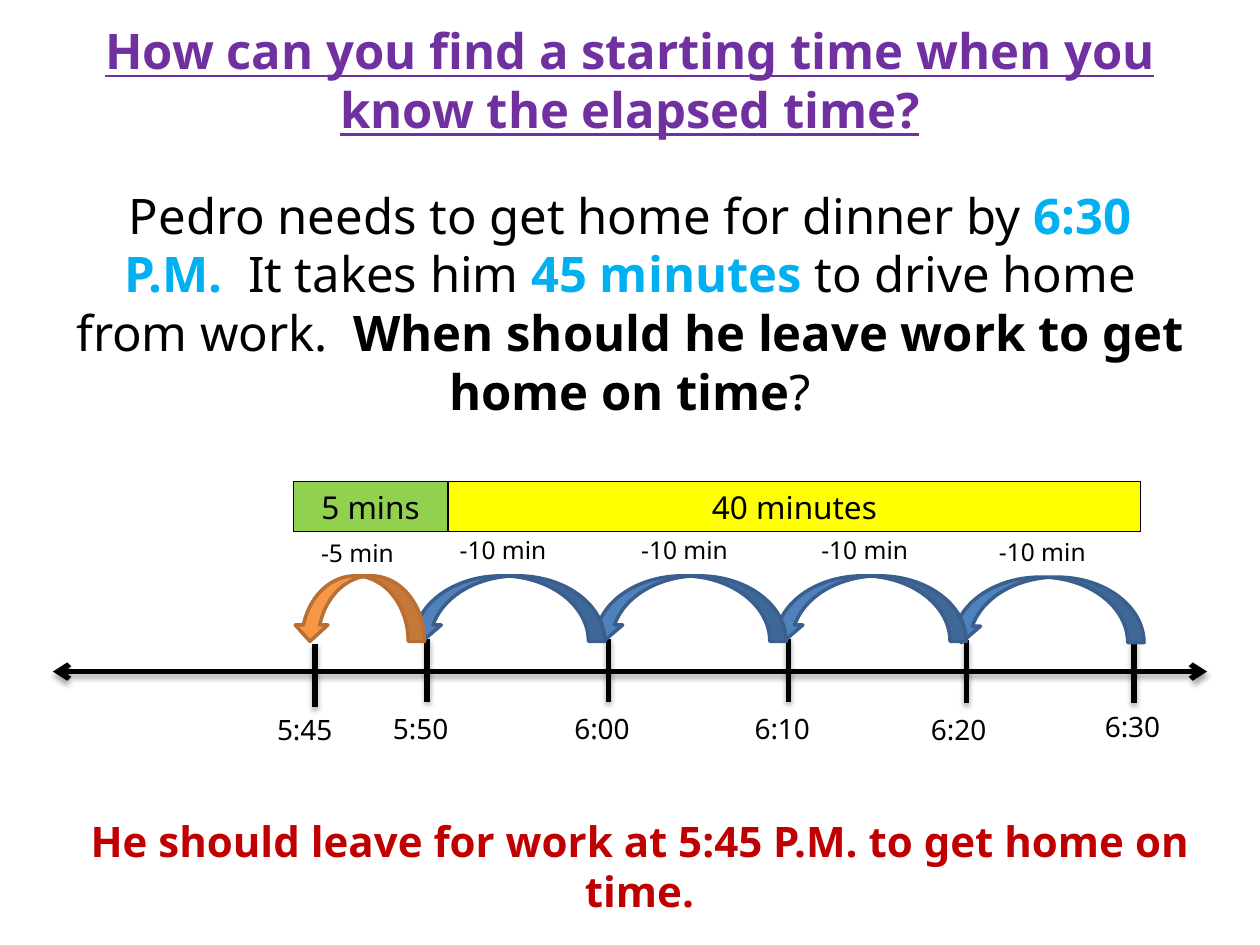
from dataclasses import dataclass

from lxml import etree
from pptx import Presentation
from pptx.dml.color import RGBColor
from pptx.enum import shapes, text
from pptx.oxml import ns
from pptx.util import Inches, Pt


@dataclass(frozen=True)
class Theme:
    font: str = "Noto Sans"
    black: str = "000000"
    purple: str = "7030A0"
    sky: str = "00B0F0"
    red: str = "C00000"
    yellow: str = "FFFF00"
    green: str = "92D050"
    blue_hop: tuple = ("4F81BD", "3A5F8C")
    orange_hop: tuple = ("F79646", "B76F34")
    question: int = 28
    answer: int = 24
    bar: int = 18
    time: int = 16
    hop: int = 14


THEME = Theme()

TIMES = [
    ("6:30", 9, 5.08, 8.67, 5.58),
    ("6:20", 7.67, 5.08, 7.29, 5.61),
    ("6:10", 6.26, 5.07, 5.89, 5.6),
    ("6:00", 4.83, 5.07, 4.46, 5.6),
    ("5:50", 3.39, 5.07, 3.02, 5.6),
    ("5:45", 2.5, 5.11, 2.1, 5.61),
]

STORY = [
    ("Pedro needs to get home for dinner by ", THEME.black, False),
    ("6:30 P.M.  ", THEME.sky, True),
    ("It takes him ", THEME.black, False),
    ("45 minutes ", THEME.sky, True),
    ("to drive home from work.  ", THEME.black, False),
    ("When should he leave work to get home on time", THEME.black, True),
    ("?", THEME.black, False),
]


def inches(*lengths):
    return [Inches(length) for length in lengths]


def style_span(span, size, color, bold=False):
    span.font.name = THEME.font
    span.font.size = Pt(size)
    span.font.bold = bold
    span.font.color.rgb = RGBColor.from_string(color)


def add_text(page, place, spans, size, centered=False, grow=True):
    box = page.shapes.add_textbox(*inches(*place))
    frame = box.text_frame
    frame.word_wrap = True
    if grow:
        frame.auto_size = text.MSO_AUTO_SIZE.SHAPE_TO_FIT_TEXT
    para = frame.paragraphs[0]
    if centered:
        para.alignment = text.PP_ALIGN.CENTER
    for words, color, bold in spans:
        span = para.add_run()
        span.text = words
        style_span(span, size, color, bold)


def add_title(page, words):
    title = page.shapes.title
    title.left, title.top, title.width, title.height = inches(0.5, 0.42, 9, 0.87)
    frame = title.text_frame
    frame.text = words
    frame.auto_size = text.MSO_AUTO_SIZE.NONE
    frame.vertical_anchor = text.MSO_ANCHOR.MIDDLE
    frame.margin_bottom = Inches(0.5)
    para = frame.paragraphs[0]
    para.alignment = text.PP_ALIGN.CENTER
    style_span(para.runs[0], THEME.question, THEME.purple, True)
    para.runs[0].font.underline = True


def add_line(page, start, end, arrows=False):
    line = page.shapes.add_connector(
        shapes.MSO_CONNECTOR.STRAIGHT, *inches(*start, *end))
    line.line.color.rgb = RGBColor.from_string(THEME.black)
    line.line.width = Pt(3)
    properties = line._element.spPr
    if arrows:
        outline = properties.find(ns.qn("a:ln"))
        for tag in ("a:headEnd", "a:tailEnd"):
            etree.SubElement(outline, ns.qn(tag), type="arrow")
    effects = etree.SubElement(properties, ns.qn("a:effectLst"))
    shadow = etree.SubElement(
        effects, ns.qn("a:outerShdw"), blurRad=str(Pt(3.1)),
        dist=str(Pt(1.8)), dir="5400000", rotWithShape="0")
    color = etree.SubElement(shadow, ns.qn("a:srgbClr"), val=THEME.black)
    etree.SubElement(color, ns.qn("a:alpha"), val="35000")


def add_filled(page, preset, place, fill, outline, width):
    shape = page.shapes.add_shape(preset, *inches(*place))
    shape.shadow.inherit = False
    shape.fill.solid()
    shape.fill.fore_color.rgb = RGBColor.from_string(fill)
    shape.line.color.rgb = RGBColor.from_string(outline)
    shape.line.width = Pt(width)
    return shape


def add_bar(page, left, width, words, fill):
    bar = add_filled(page, shapes.MSO_SHAPE.RECTANGLE,
                     (left, 3.82, width, 0.4), fill, THEME.black, 0.75)
    bar.text_frame.text = words
    bar.text_frame.auto_size = text.MSO_AUTO_SIZE.SHAPE_TO_FIT_TEXT
    para = bar.text_frame.paragraphs[0]
    para.alignment = text.PP_ALIGN.CENTER
    style_span(para.runs[0], THEME.bar, THEME.black)


def add_hop(page, left, top, width, colors, words, label_left, label_top):
    arc = add_filled(page, shapes.MSO_SHAPE.CURVED_DOWN_ARROW,
                     (left, top, width, 0.52), *colors, 2)
    arc._element.spPr.get_or_add_xfrm().set("flipH", "1")
    add_text(page, (label_left, label_top, 1, 0.34),
             [(words, THEME.black, False)], THEME.hop)


def add_number_line(page):
    add_line(page, (0.42, 5.33), (9.58, 5.33), arrows=True)
    last = len(TIMES) - 1
    for index, (time, x, top, label_left, label_top) in enumerate(TIMES):
        add_line(page, (x, top), (x, top + 0.5))
        add_text(page, (label_left, label_top, 0.75, 0.37),
                 [(time, THEME.black, False)], THEME.time)
        left = x - 0.17
        if index == last:
            add_hop(page, left, 4.57, 1.04, THEME.orange_hop,
                    "-5 min", 2.45, 4.22)
        elif index > 0:
            add_hop(page, left, top - 0.5, 1.58, THEME.blue_hop,
                    "-10 min", left + 0.33, top - 0.87)


def main():
    deck = Presentation()
    deck.slide_width, deck.slide_height = inches(10, 7.5)
    page = deck.slides.add_slide(deck.slide_layouts[5])
    add_title(page, "How can you find a starting time when you know the elapsed time?")
    add_text(page, (0.5, 1.42, 9, 5.75), STORY, THEME.question,
             centered=True, grow=False)
    add_text(page, (0.45, 6.42, 9.25, 0.91),
             [("He should leave for work at 5:45 P.M. to get home on time.",
               THEME.red, True)], THEME.answer, centered=True)
    add_number_line(page)
    add_bar(page, 3.56, 5.49, "40 minutes", THEME.yellow)
    add_bar(page, 2.33, 1.22, "5 mins", THEME.green)
    deck.save("out.pptx")


if __name__ == "__main__":
    main()
